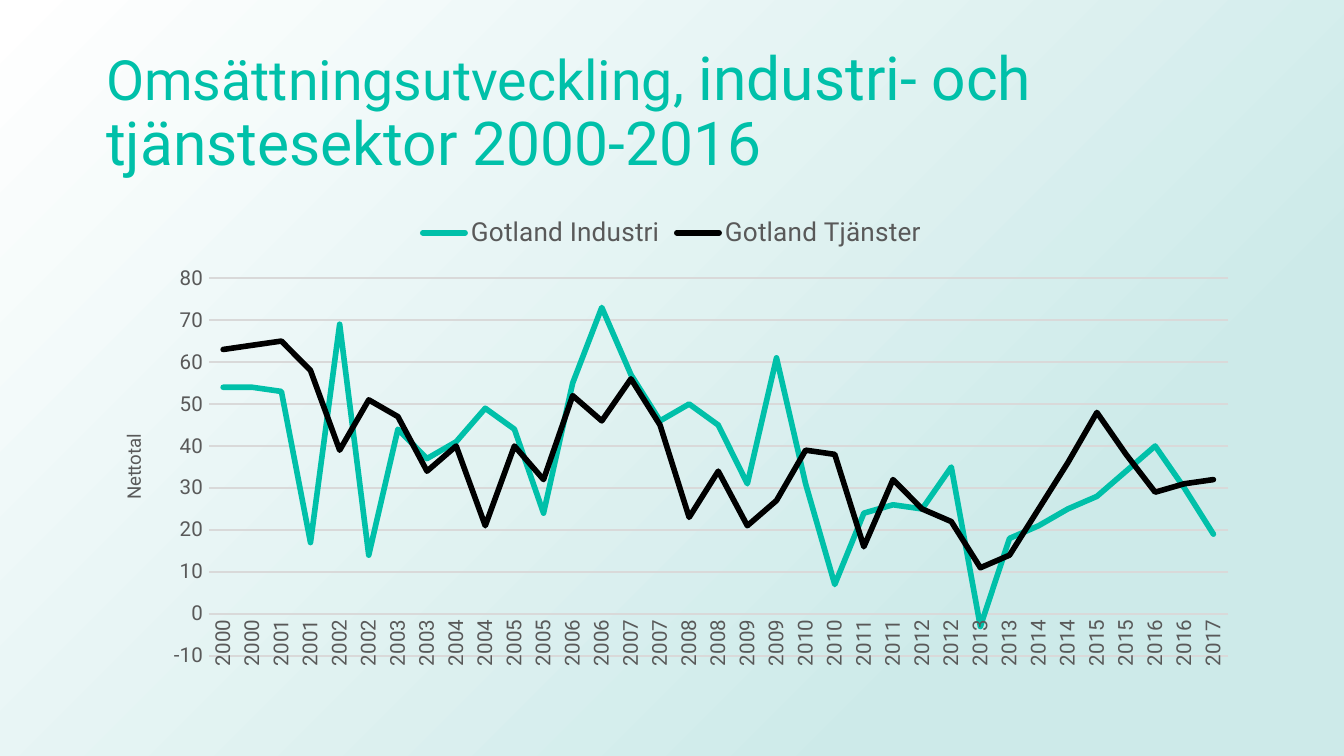
"""Build a slide with a line chart of turnover in Gotland's industry and services."""
import pptx
import pptx.chart.data
import pptx.dml.color
import pptx.enum.chart
import pptx.enum.shapes
import pptx.enum.text
import pptx.oxml
import pptx.oxml.ns
import pptx.util
from pptx.util import Inches, Pt

FONT = "Roboto"
TEAL, BLACK, GREY, PALE = "00C0A9", "000000", "595959", "D9D9D9"
TITLE_RUNS = [("Omsättningsutveckling, ", 29.7), ("industri- och tjänstesektor 2000-2016", 32.4)]
YEARS = [str(2000 + index // 2) for index in range(35)]
SERIES = [
    ("Gotland Industri", TEAL, [
        54, 54, 53, 17, 69, 14, 44, 37, 41, 49, 44, 24, 55, 73, 57, 46, 50, 45,
        31, 61, 31, 7, 24, 26, 25, 35, -3, 18, 21, 25, 28, 34, 40, 30, 19]),
    ("Gotland Tjänster", BLACK, [
        63, 64, 65, 58, 39, 51, 47, 34, 40, 21, 40, 32, 52, 46, 56, 45, 23, 34,
        21, 27, 39, 38, 16, 32, 25, 22, 11, 14, 25, 36, 48, 38, 29, 31, 32]),
]
PLOT_LAYOUT = {"x": 0.1, "y": 0.16, "w": 0.88, "h": 0.79}
GRADIENT = [(23, "CDEAE9"), (100, "FFFFFF")]
SLIDE_WIDTH = Inches(10)
SLIDE_HEIGHT = SLIDE_WIDTH * 9 // 16


def color(value):
    return pptx.dml.color.RGBColor.from_string(value)


def set_attributes(target, values):
    for name, value in values.items():
        setattr(target, name, value)


def set_font(font, size, value):
    set_attributes(font, {"name": FONT, "size": Pt(size), "bold": False})
    font.color.rgb = color(value)


def set_line(line, width, value):
    line.width = Pt(width)
    line.color.rgb = color(value)


def add_background(slide):
    shape = slide.shapes.add_shape(
        pptx.enum.shapes.MSO_SHAPE.RECTANGLE, 0, 0, SLIDE_WIDTH, SLIDE_HEIGHT)
    shape.shadow.inherit = False
    shape.line.fill.background()
    shape.fill.solid()
    stops = "".join(
        f'<a:gs pos="{position * 1000}"><a:srgbClr val="{value}"/></a:gs>'
        for position, value in GRADIENT)
    gradient = pptx.oxml.parse_xml(
        f'<a:gradFill {pptx.oxml.ns.nsdecls("a")} rotWithShape="1"><a:gsLst>{stops}</a:gsLst>'
        '<a:path path="circle"><a:fillToRect l="100000" t="100000"/></a:path></a:gradFill>')
    properties = shape.element.spPr
    properties.replace(properties.find(pptx.oxml.ns.qn("a:solidFill")), gradient)
    slide.shapes._spTree.insert(2, shape.element)


def add_title(slide):
    title = slide.shapes.title
    set_attributes(title, {"left": Inches(0.69), "top": Inches(0.3),
                           "width": Inches(8.62), "height": Inches(1.09)})
    set_attributes(title.text_frame, {
        "vertical_anchor": pptx.enum.text.MSO_ANCHOR.MIDDLE, "word_wrap": True,
        "auto_size": pptx.enum.text.MSO_AUTO_SIZE.NONE})
    paragraph = title.text_frame.paragraphs[0]
    set_attributes(paragraph, {"alignment": pptx.enum.text.PP_ALIGN.LEFT, "line_spacing": 0.9})
    for text, size in TITLE_RUNS:
        run = paragraph.add_run()
        run.text = text
        set_font(run.font, size, TEAL)


def format_axes(chart):
    no_tick = pptx.enum.chart.XL_TICK_MARK.NONE
    for axis in (chart.category_axis, chart.value_axis):
        set_attributes(axis, {"major_tick_mark": no_tick, "minor_tick_mark": no_tick})
        set_font(axis.tick_labels.font, 11, GREY)
    set_line(chart.category_axis.format.line, 0.75, PALE)
    labels = chart.category_axis._element.find(pptx.oxml.ns.qn("c:txPr"))
    labels.find(pptx.oxml.ns.qn("a:bodyPr")).set("rot", "-5400000")

    axis = chart.value_axis
    set_attributes(axis, {"minimum_scale": -10, "maximum_scale": 80, "major_unit": 10,
                          "has_major_gridlines": True})
    set_attributes(axis.tick_labels, {"number_format": "0", "number_format_is_linked": False})
    set_line(axis.major_gridlines.format.line, 0.75, PALE)
    axis.format.line.fill.background()
    frame = axis.axis_title.text_frame
    frame.text = "Nettotal"
    set_font(frame.paragraphs[0].runs[0].font, 10, GREY)


def place_plot(chart):
    plot_area = chart._chartSpace.chart.plotArea
    for layout in plot_area.findall(pptx.oxml.ns.qn("c:layout")):
        plot_area.remove(layout)
    modes = '<c:layoutTarget val="inner"/><c:xMode val="edge"/><c:yMode val="edge"/>'
    sizes = "".join(f'<c:{name} val="{value}"/>' for name, value in PLOT_LAYOUT.items())
    plot_area.insert(0, pptx.oxml.parse_xml(
        f'<c:layout {pptx.oxml.ns.nsdecls("c")}><c:manualLayout>{modes}{sizes}'
        '</c:manualLayout></c:layout>'))


def add_line_chart(slide):
    data = pptx.chart.data.CategoryChartData(number_format="0")
    data.categories = YEARS
    for name, _, values in SERIES:
        data.add_series(name, values)
    chart = slide.shapes.add_chart(
        pptx.enum.chart.XL_CHART_TYPE.LINE, Inches(0.69), Inches(1.5),
        Inches(8.62), Inches(3.56), data).chart
    set_attributes(chart, {"has_title": False, "has_legend": True})
    set_font(chart.font, 10, BLACK)
    set_attributes(chart.legend, {
        "position": pptx.enum.chart.XL_LEGEND_POSITION.TOP, "include_in_layout": False})
    set_font(chart.legend.font, 14, GREY)
    chart.plots[0].vary_by_categories = False
    for series, (_, value, _) in zip(chart.plots[0].series, SERIES):
        series.smooth = False
        series.marker.style = pptx.enum.chart.XL_MARKER_STYLE.NONE
        set_line(series.format.line, 3, value)
        series.format.line._ln.set("cap", "rnd")
    format_axes(chart)
    place_plot(chart)


def main():
    presentation = pptx.Presentation()
    set_attributes(presentation, {"slide_width": SLIDE_WIDTH, "slide_height": SLIDE_HEIGHT})
    slide = presentation.slides.add_slide(presentation.slide_layouts[5])
    add_background(slide)
    add_title(slide)
    add_line_chart(slide)
    presentation.save("out.pptx")


if __name__ == "__main__":
    main()
